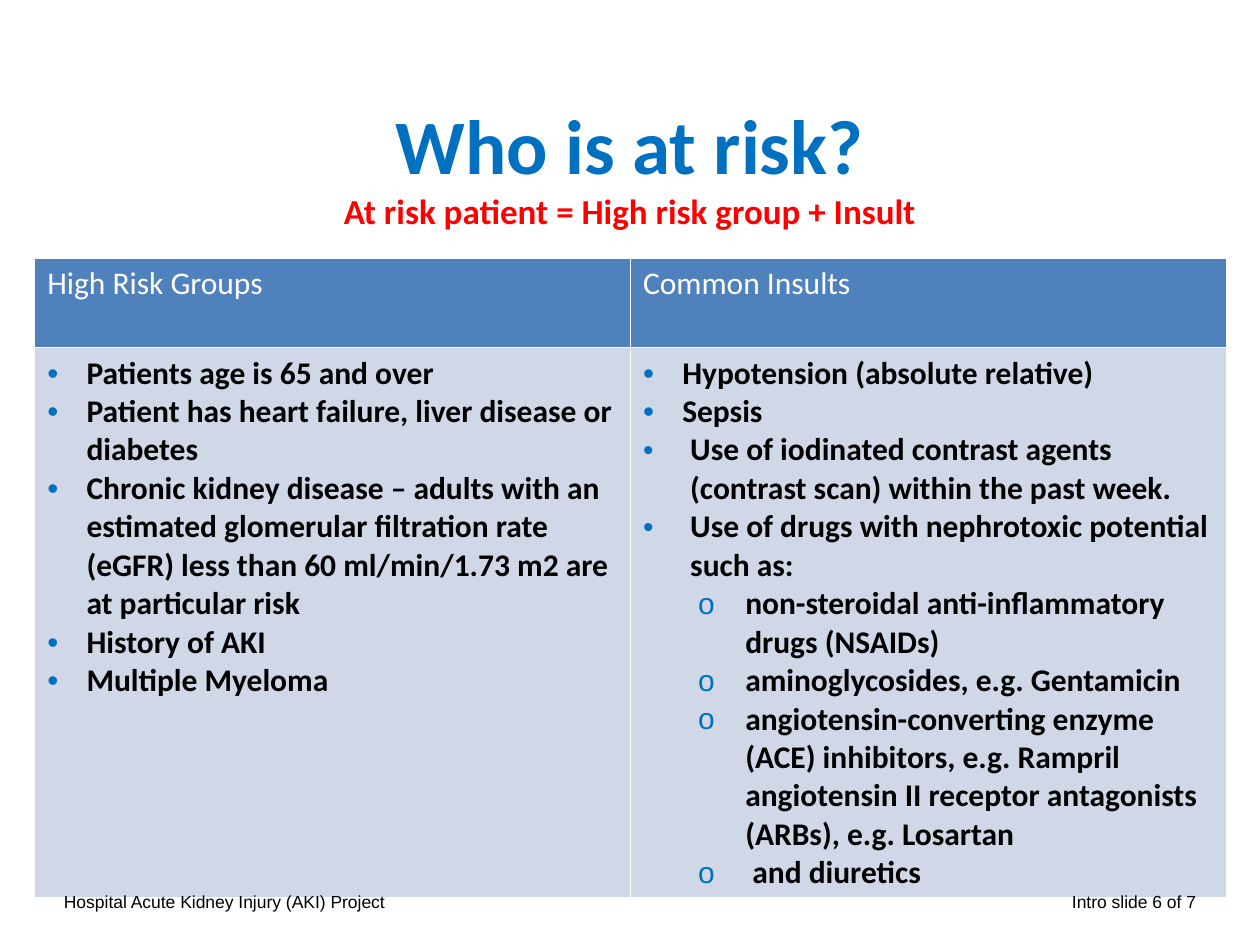
from lxml.etree import SubElement
from pptx import Presentation
from pptx.dml.color import RGBColor
from pptx.enum.text import MSO_ANCHOR, PP_ALIGN
from pptx.oxml.ns import qn
from pptx.util import Cm, Pt

BLUE = RGBColor(0x00, 0x70, 0xC0)
RED = RGBColor(0xFF, 0x00, 0x00)
BLACK = RGBColor(0x00, 0x00, 0x00)
WHITE = RGBColor(0xFF, 0xFF, 0xFF)
HEAD = RGBColor(0x4F, 0x81, 0xBD)
BODY = RGBColor(0xD0, 0xD8, 0xE8)

# Bullet kinds: level, left margin in cm, hang in cm, sign, size in percent
MAIN = (0, 0.79, 0.79, "•", 100)
WIDE = (1, 0.95, 0.95, "•", 95)
SUB = (2, 2.06, 0.95, "o", 95)

GROUPS = [
    (MAIN, "Patients age is 65 and over"),
    (MAIN, "Patient has heart failure, liver disease or diabetes"),
    (MAIN, "Chronic kidney disease – adults with an estimated glomerular "
           "filtration rate (eGFR) less than 60 ml/min/1.73 m2 are at "
           "particular risk"),
    (MAIN, "History of AKI"),
    (MAIN, "Multiple Myeloma"),
]
INSULTS = [
    (MAIN, "Hypotension (absolute relative)"),
    (MAIN, "Sepsis"),
    (WIDE, "Use of iodinated contrast agents (contrast scan) within the "
           "past week."),
    (WIDE, "Use of drugs with nephrotoxic potential such as:"),
    (SUB, "non-steroidal anti-inflammatory drugs (NSAIDs)"),
    (SUB, "aminoglycosides, e.g. Gentamicin"),
    (SUB, "angiotensin-converting enzyme (ACE) inhibitors, e.g. Rampril "
          "angiotensin II receptor antagonists (ARBs), e.g. Losartan"),
    (SUB, " and diuretics"),
]


class Deck:
    def __init__(self):
        self.font = "Calibri"
        self.size = 18
        self.prs = Presentation()
        self.prs.slide_width, self.prs.slide_height = Cm(25.4), Cm(19.05)
        self.slide = self.prs.slides.add_slide(self.prs.slide_layouts[6])

    def style(self, run, size, color, bold=False, font=None):
        run.font.name = font or self.font
        run.font.size = Pt(size)
        run.font.bold = bold
        run.font.color.rgb = color

    def box(self, left, top, width, height):
        shape = self.slide.shapes.add_textbox(
            Cm(left), Cm(top), Cm(width), Cm(height))
        shape.text_frame.word_wrap = True
        return shape.text_frame

    def title(self, head, note):
        frame = self.box(1.27, 2.97, 22.86, 2.57)
        frame.vertical_anchor = MSO_ANCHOR.BOTTOM
        frame.margin_bottom = Cm(0.87)
        para = frame.paragraphs[0]
        para.text = f"{head}\v{note}"
        para.alignment = PP_ALIGN.CENTER
        self.style(para.runs[0], 44, BLUE, True)
        self.style(para.runs[1], 20, RED, True)

    def footer(self, left, right):
        frame = self.box(0.89, 17.83, 23.6, 0.69)
        frame.margin_left = Cm(0.4)
        para = frame.paragraphs[0]
        para.text = f"{left}\t{right}"
        tabs = SubElement(para._p.get_or_add_pPr(), qn("a:tabLst"))
        SubElement(tabs, qn("a:tab"), pos=str(Cm(22.82)), algn="r")
        for run in para.runs:
            self.style(run, 10, BLACK, font="Arial")

    def table(self, heads, lists):
        table = self.slide.shapes.add_table(
            2, len(heads), Cm(0.7), Cm(5.21), Cm(24.02), Cm(12.88)).table
        table.rows[0].height, table.rows[1].height = Cm(1.8), Cm(11.08)
        for col, (head, items) in enumerate(zip(heads, lists)):
            table.columns[col].width = Cm(12.01)
            top, cell = table.cell(0, col), table.cell(1, col)
            top.text_frame.text = head
            self.style(top.text_frame.paragraphs[0].runs[0], self.size, WHITE)
            self.paint(top, HEAD)
            self.items(cell.text_frame, items)
            self.paint(cell, BODY)

    def paint(self, cell, color):
        """Give a cell white borders and a plain fill."""
        props = cell._tc.get_or_add_tcPr()
        for side in ("lnL", "lnR", "lnT", "lnB"):
            line = SubElement(props, qn(f"a:{side}"), w=str(Pt(1)))
            fill = SubElement(line, qn("a:solidFill"))
            SubElement(fill, qn("a:srgbClr"), val=str(WHITE))
        cell.fill.solid()
        cell.fill.fore_color.rgb = color

    def items(self, frame, items):
        for num, (kind, text) in enumerate(items):
            para = frame.add_paragraph() if num else frame.paragraphs[0]
            para.text = text
            self.style(para.runs[0], self.size, BLACK, True)
            self.bullet(para, *kind)

    def bullet(self, para, level, left, hang, sign, size):
        para.level = level
        props = para._p.get_or_add_pPr()
        props.set("marL", str(Cm(left)))
        props.set("indent", str(-Cm(hang)))
        color = SubElement(props, qn("a:buClr"))
        SubElement(color, qn("a:srgbClr"), val=str(BLUE))
        SubElement(props, qn("a:buSzPct"), val=str(size * 1000))
        SubElement(props, qn("a:buFont"), typeface="Arial")
        SubElement(props, qn("a:buChar"), char=sign)


def main():
    deck = Deck()
    deck.title("Who is at risk?", "At risk patient = High risk group + Insult")
    deck.table(["High Risk Groups", "Common Insults"], [GROUPS, INSULTS])
    deck.footer("Hospital Acute Kidney Injury (AKI) Project",
                "Intro slide 6 of 7")
    deck.prs.save("out.pptx")


if __name__ == "__main__":
    main()
